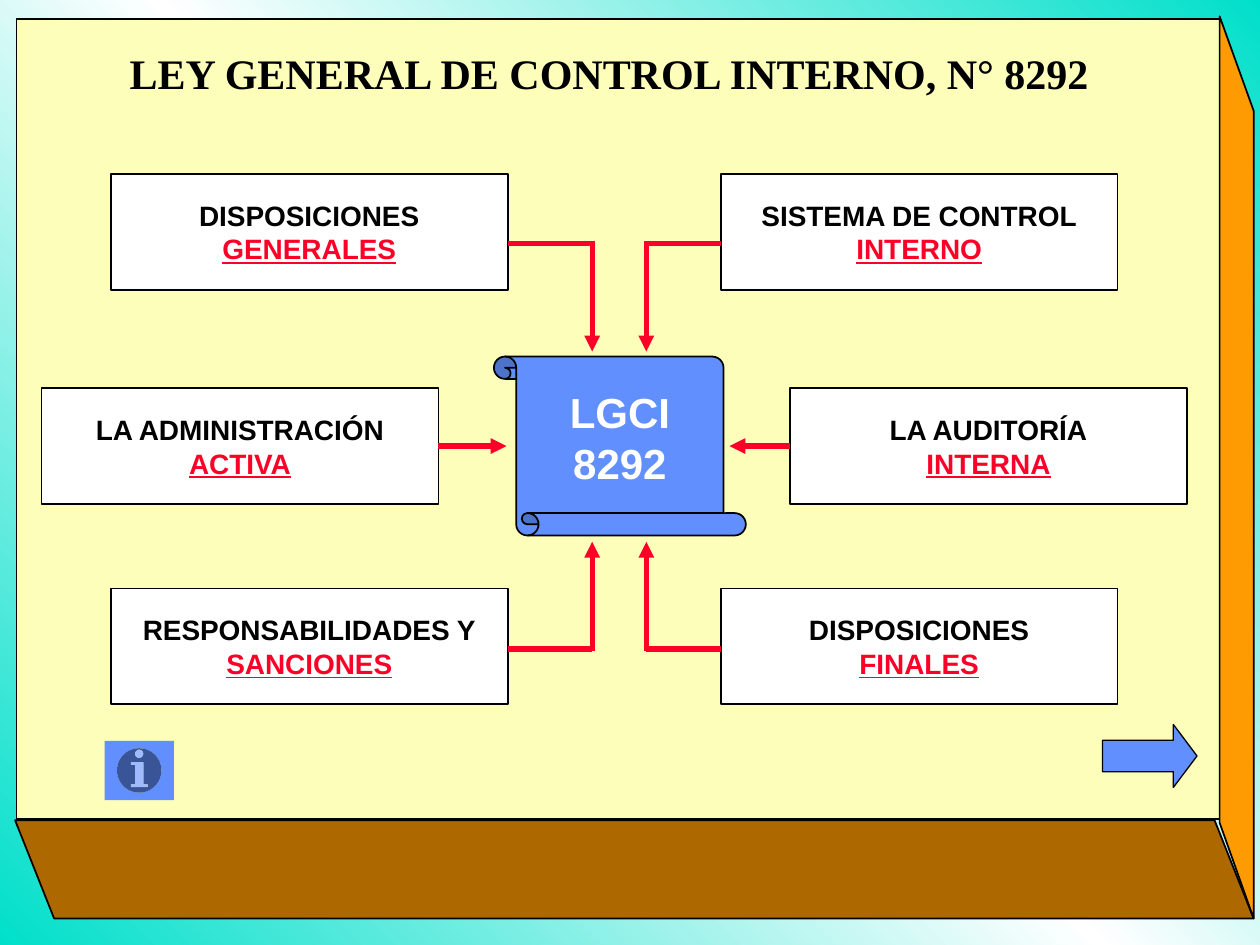
from copy import deepcopy
from lxml.etree import SubElement
from pptx import Presentation
from pptx.dml.color import RGBColor
from pptx.enum.shapes import MSO_CONNECTOR, MSO_SHAPE
from pptx.enum.text import MSO_ANCHOR, PP_ALIGN
from pptx.oxml.ns import qn
from pptx.util import Inches, Pt

COLS, ROWS = 10, 7.5
CELL = Inches(1)
BLACK, WHITE, RED, BLUE = "000000", "FFFFFF", "FC0128", "618FFD"
TEAL, CREAM, BROWN, GOLD = "00DFCA", "FCFEB9", "AD6900", "FE9B03"
BOX_W, BOX_H = 3.15, 0.92
MID_X = 4.875


def grid(*cells):
    return [round(cell * CELL) for cell in cells]


def tint(code):
    return RGBColor.from_string(code)


def paint(shape, fill, width=1):
    shape.shadow.inherit = False
    shape.fill.solid()
    shape.fill.fore_color.rgb = tint(fill)
    if width:
        shape.line.color.rgb = tint(BLACK)
        shape.line.width = Pt(width)
    else:
        shape.line.fill.background()
    return shape


def add_form(slide, kind, place, fill, width=1):
    return paint(slide.shapes.add_shape(kind, *grid(*place)), fill, width)


def add_side(slide, points, fill):
    first, *rest = [grid(*point) for point in points]
    maker = slide.shapes.build_freeform(*first)
    maker.add_line_segments(rest, close=True)
    paint(maker.convert_to_shape(), fill)


def add_run(para, text, size, color, font="Arial", under=None):
    para.alignment = PP_ALIGN.CENTER
    run = para.add_run()
    run.text = text
    run.font.name = font
    run.font.size = Pt(size)
    run.font.bold = True
    run.font.underline = under
    run.font.color.rgb = tint(color)


def add_box(slide, left, top, head, key):
    box = add_form(slide, MSO_SHAPE.RECTANGLE, (left, top, BOX_W, BOX_H), WHITE)
    frame = box.text_frame
    add_run(frame.paragraphs[0], head, 16, BLACK)
    add_run(frame.add_paragraph(), key, 16, RED, under=True)
    return box


def add_line(slide, start, end, arrow=False):
    line = slide.shapes.add_connector(
        MSO_CONNECTOR.STRAIGHT, *grid(*start), *grid(*end))
    line.line.color.rgb = tint(RED)
    line.line.width = Pt(3)
    if arrow:
        SubElement(line.line._get_or_add_ln(), qn("a:tailEnd"), type="triangle")
    SubElement(line._element.spPr, qn("a:effectLst"))
    return line


def set_back(slide):
    fill = slide.background.fill
    fill.gradient()
    fill.gradient_angle = 45
    stops = slide._element.find(".//" + qn("a:gsLst"))
    stops.append(deepcopy(stops[0]))
    for stop, place, color in zip(
            fill.gradient_stops, (0, 0.5, 1), (TEAL, WHITE, TEAL)):
        stop.position = place
        stop.color.rgb = tint(color)


def add_board(slide):
    add_form(slide, MSO_SHAPE.RECTANGLE, (0.13, 0.15, 9.55, 6.35), CREAM)
    add_side(slide, [(0.12, 6.51), (9.64, 6.51), (9.95, 7.29), (0.43, 7.29)], BROWN)
    add_side(slide, [(9.68, 0.13), (9.68, 6.53), (9.95, 7.29), (9.95, 0.88)], GOLD)


def set_title(slide, text):
    title = slide.shapes.title
    title.left, title.top, title.width, title.height = grid(0.42, 0.33, 8.83, 0.5)
    title.text_frame.vertical_anchor = MSO_ANCHOR.MIDDLE
    add_run(title.text_frame.paragraphs[0], text, 24, BLACK, "Times New Roman")
    slide.shapes._spTree.append(title._element)


def add_scroll(slide):
    scroll = add_form(slide, MSO_SHAPE.VERTICAL_SCROLL, (3.92, 2.83, 2, 1.42), BLUE)
    scroll.adjustments[0] = 0.125
    scroll._element.spPr.xfrm.set("flipV", "1")
    frame = slide.shapes.add_textbox(*grid(4.38, 3.02, 1.08, 0.9)).text_frame
    frame.word_wrap = True
    para = frame.paragraphs[0]
    add_run(para, "LGCI", 24, WHITE)
    para.add_line_break()
    add_run(para, "8292", 24, WHITE)


def add_topics(slide):
    rows = [
        (1.38, 1.69, ("DISPOSICIONES", "GENERALES"), ("SISTEMA DE CONTROL", "INTERNO")),
        (3.08, 2.79, ("LA ADMINISTRACIÓN", "ACTIVA"), ("LA AUDITORÍA", "INTERNA")),
        (4.67, 1.69, ("RESPONSABILIDADES Y", "SANCIONES"), ("DISPOSICIONES", "FINALES")),
    ]
    bends = {1.38: (1.93, 2.79), 4.67: (5.15, 4.3)}
    for top, gap, *pair in rows:
        half = gap / 2
        lefts = (MID_X - half - BOX_W, MID_X + half)
        if top not in bends:
            lefts = (0.33, 6.27)
        edges = (lefts[0] + BOX_W, lefts[1])
        for left, edge, words, stem, tip, site in zip(
                lefts, edges, pair, (4.7, 5.13), (4.02, 5.79), (3, 1)):
            box = add_box(slide, left, top, *words)
            if top in bends:
                turn, end = bends[top]
                add_line(slide, (edge, turn), (stem, turn))
                lap = 0.02 if turn > end else -0.02
                add_line(slide, (stem, turn + lap), (stem, end), True)
            else:
                mid = top + BOX_H / 2
                line = add_line(slide, (edge, mid), (tip, mid), True)
                line.begin_connect(box, site)


def main():
    deck = Presentation()
    deck.slide_width, deck.slide_height = grid(COLS, ROWS)
    slide = deck.slides.add_slide(deck.slide_layouts[5])
    set_back(slide)
    add_board(slide)
    add_scroll(slide)
    add_topics(slide)
    set_title(slide, "LEY GENERAL DE CONTROL INTERNO, N° 8292")
    arrow = add_form(slide, MSO_SHAPE.RIGHT_ARROW, (8.75, 5.75, 0.75, 0.5), BLUE, 0.75)
    arrow.adjustments[1] = 0.375
    add_form(slide, MSO_SHAPE.ACTION_BUTTON_INFORMATION, (0.83, 5.88, 0.55, 0.47), BLUE, 0)
    deck.save("out.pptx")


if __name__ == "__main__":
    main()
